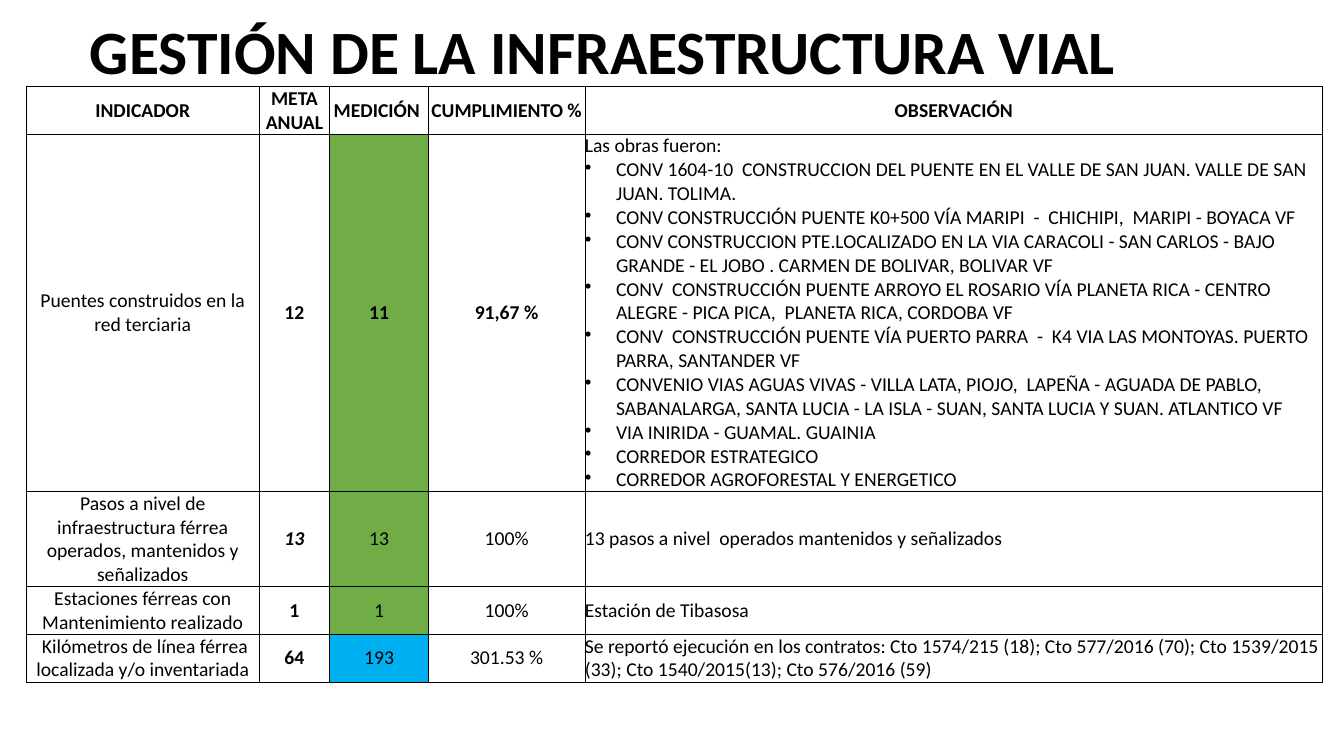
"""Build the road infrastructure management slide with its table of indicators."""
import pptx
import pptx.dml.color
import pptx.enum.text
import pptx.oxml
import pptx.oxml.ns
import pptx.util

THEME = {
    "font": "Calibri", "title": 44, "body": 14, "border": 0.5, "top border": 1,
    "ink": "000000", "paper": "FFFFFF", "met": "70AD47", "exceeded": "00B0F0",
}
ALIGN = pptx.enum.text.PP_ALIGN
MIDDLE = pptx.enum.text.MSO_ANCHOR.MIDDLE

HEADINGS = ["INDICADOR", "META ANUAL", "MEDICIÓN ", "CUMPLIMIENTO %", "OBSERVACIÓN"]
WORKS = [
    "Las obras fueron:",
    "CONV 1604-10  CONSTRUCCION DEL PUENTE EN EL VALLE DE SAN JUAN. VALLE DE SAN JUAN. TOLIMA.",
    "CONV CONSTRUCCIÓN PUENTE K0+500 VÍA MARIPI  -  CHICHIPI,  MARIPI - BOYACA VF",
    "CONV CONSTRUCCION PTE.LOCALIZADO EN LA VIA CARACOLI - SAN CARLOS - BAJO GRANDE - EL JOBO . CARMEN DE BOLIVAR, BOLIVAR VF",
    "CONV  CONSTRUCCIÓN PUENTE ARROYO EL ROSARIO VÍA PLANETA RICA - CENTRO ALEGRE - PICA PICA,  PLANETA RICA, CORDOBA VF",
    "CONV  CONSTRUCCIÓN PUENTE VÍA PUERTO PARRA  -  K4 VIA LAS MONTOYAS. PUERTO PARRA, SANTANDER VF",
    "CONVENIO VIAS AGUAS VIVAS - VILLA LATA, PIOJO,  LAPEÑA - AGUADA DE PABLO, SABANALARGA, SANTA LUCIA - LA ISLA - SUAN, SANTA LUCIA Y SUAN. ATLANTICO VF",
    "VIA INIRIDA - GUAMAL. GUAINIA",
    "CORREDOR ESTRATEGICO",
    "CORREDOR AGROFORESTAL Y ENERGETICO",
]
INDICATORS = [
    ["Puentes construidos en la red terciaria", "12", "11", "91,67 %", "\n".join(WORKS)],
    ["Pasos a nivel de infraestructura férrea operados, mantenidos y señalizados",
     "13", "13", "100%", "13 pasos a nivel  operados mantenidos y señalizados"],
    ["Estaciones férreas con Mantenimiento realizado", "1", "1", "100%", "Estación de Tibasosa"],
    [" Kilómetros de línea férrea localizada y/o inventariada", "64", "193", "301.53 %",
     "Se reportó ejecución en los contratos: Cto 1574/215 (18); Cto 577/2016 (70); "
     "Cto 1539/2015 (33); Cto 1540/2015(13); Cto 576/2016 (59)"],
]
RESULTS = ["met", "met", "met", "exceeded"]
COLUMN_SHARES = [17.96, 5.44, 7.62, 12.06, 56.92]
LINES_PER_ROW = [2, 15, 4, 2, 2]
TARGET, MEASURED, OBSERVATION = 1, 2, 4


def style_text(paragraph, size, bold, italic=False):
    font = paragraph.font
    font.name, font.size = THEME["font"], pptx.util.Pt(size)
    font.bold, font.italic = bold, italic
    font.color.rgb = pptx.dml.color.RGBColor.from_string(THEME["ink"])


def draw_borders(cell, top_width):
    properties = cell._tc.get_or_add_tcPr()
    for position, side in enumerate(["lnL", "lnR", "lnT", "lnB"]):
        width = pptx.util.Pt(top_width if side == "lnT" else THEME["border"])
        properties.insert(position, pptx.oxml.parse_xml(
            f'<a:{side} {pptx.oxml.ns.nsdecls("a")} w="{width}"><a:solidFill>'
            f'<a:srgbClr val="{THEME["ink"]}"/></a:solidFill></a:{side}>'))


deck = pptx.Presentation()
deck.slide_width, deck.slide_height = pptx.util.Inches(13.33), pptx.util.Inches(7.5)
across, down = deck.slide_width / 100, deck.slide_height / 100
slide = deck.slides.add_slide(deck.slide_layouts[6])

title = slide.shapes.add_textbox(
    int(5.95 * across), int(-2.5 * down), int(86.25 * across), int(19.3 * down)).text_frame
title.word_wrap = True
title.vertical_anchor = MIDDLE
title.text = "GESTIÓN DE LA INFRAESTRUCTURA VIAL"
title.paragraphs[0].line_spacing = 0.9
style_text(title.paragraphs[0], THEME["title"], True)

table_width, line_height = 96.47 * across, 3.15 * down
indicators = slide.shapes.add_table(
    len(LINES_PER_ROW), len(COLUMN_SHARES), int(1.96 * across), int(11.47 * down),
    int(table_width), int(line_height * sum(LINES_PER_ROW))).table
indicators.first_row = indicators.horz_banding = False
for column, share in zip(indicators.columns, COLUMN_SHARES):
    column.width = int(table_width * share / 100)
for row, lines in zip(indicators.rows, LINES_PER_ROW):
    row.height = int(line_height * lines)

for r, entries in enumerate([HEADINGS] + INDICATORS):
    for c, entry in enumerate(entries):
        cell = indicators.cell(r, c)
        cell.text = entry
        cell.vertical_anchor = MIDDLE
        cell.margin_left = cell.margin_right = cell.margin_top = cell.margin_bottom = 0
        fill = THEME["paper"]
        if r and c == MEASURED:
            fill = THEME[RESULTS[r - 1]]
        cell.fill.solid()
        cell.fill.fore_color.rgb = pptx.dml.color.RGBColor.from_string(fill)
        draw_borders(cell, THEME["border"] if r else THEME["top border"])

        bold = r == 0 or c == TARGET or (r == 1 and 0 < c < OBSERVATION)
        for p, paragraph in enumerate(cell.text_frame.paragraphs):
            paragraph.alignment = ALIGN.LEFT if r and c == OBSERVATION else ALIGN.CENTER
            if p:
                bullet = paragraph._p.get_or_add_pPr()
                indent = pptx.util.Inches(0.31)
                bullet.set("marL", str(indent))
                bullet.set("indent", str(-indent))
                bullet.append(pptx.oxml.parse_xml(
                    f'<a:buChar {pptx.oxml.ns.nsdecls("a")} char="•"/>'))
            style_text(paragraph, THEME["body"], bold, r == 2 and c == TARGET)

deck.save("out.pptx")
